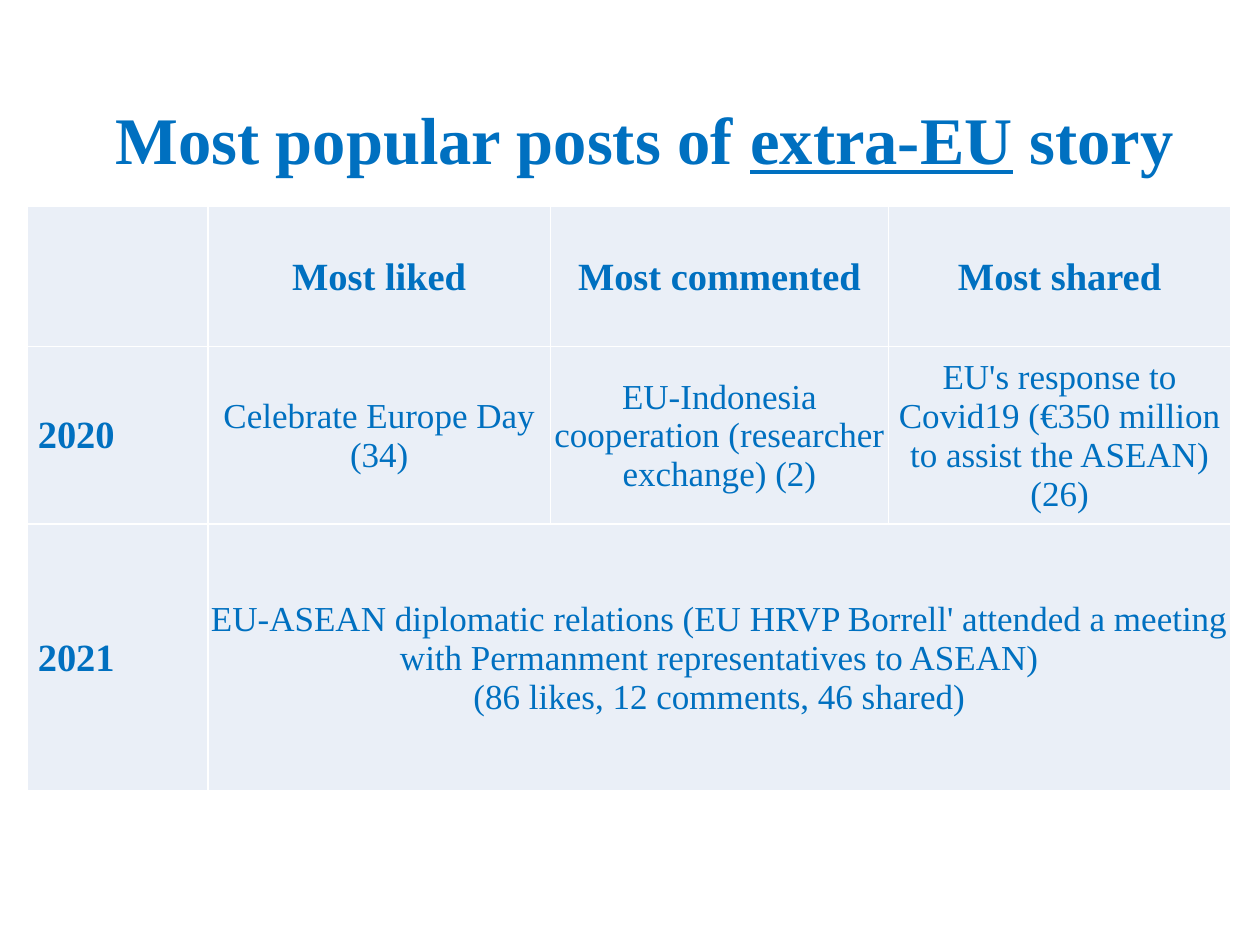
from lxml import etree
from pptx import Presentation, util as u
from pptx.dml.color import RGBColor
from pptx.enum import text
from pptx.oxml import ns

BLUE, PALE, WHITE = "0070C0", "EAEFF7", "FFFFFF"
COLUMN_WIDTHS = [1.43, 2.72, 2.68, 2.72]
ROW_HEIGHTS = [1.11, 1.41, 2.12]
ROWS = [
    ["", "Most liked", "Most commented", "Most shared"],
    ["2020", "Celebrate Europe Day (34)",
     "EU-Indonesia cooperation (researcher exchange) (2)",
     "EU's response to Covid19 (€350 million to assist the ASEAN) (26)"],
    ["2021", "EU-ASEAN diplomatic relations (EU HRVP Borrell' attended a meeting "
     "with Permanment representatives to ASEAN)\n(86 likes, 12 comments, 46 shared)"],
]


def color(value):
    return RGBColor.from_string(value)


def set_values(target, values):
    for name, value in values.items():
        setattr(target, name, value)


class SlideBuilder:
    def __init__(self, slide, font_name="Times New Roman"):
        self.slide = slide
        self.font_name = font_name

    def style_font(self, font, size, bold):
        set_values(font, {"name": self.font_name, "size": u.Pt(size), "bold": bold})
        font.color.rgb = color(BLUE)

    def add_title(self, left, top, width, height, parts):
        """Add a centred title from (text, underlined) parts."""
        box = self.slide.shapes.add_textbox(*map(u.Inches, (left, top, width, height)))
        set_values(box.text_frame, {"word_wrap": True,
                                    "vertical_anchor": text.MSO_ANCHOR.MIDDLE})
        paragraph = box.text_frame.paragraphs[0]
        set_values(paragraph, {"alignment": text.PP_ALIGN.CENTER, "line_spacing": 0.9})
        for words, underlined in parts:
            run = paragraph.add_run()
            run.text = words
            self.style_font(run.font, 38, True)
            run.font.underline = underlined

    def add_borders(self, cell):
        properties = cell._tc.get_or_add_tcPr()
        for side in "LRTB":
            line = etree.SubElement(properties, ns.qn(f"a:ln{side}"), w=str(u.Pt(1)))
            fill = etree.SubElement(line, ns.qn("a:solidFill"))
            etree.SubElement(fill, ns.qn("a:srgbClr"), val=WHITE)

    def fill_cell(self, cell, words, is_header, is_label):
        self.add_borders(cell)
        cell.fill.solid()
        cell.fill.fore_color.rgb = color(PALE)
        set_values(cell, {
            "margin_left": u.Inches(0.08 if is_label else 0.01),
            "margin_right": u.Inches(0.01),
            "margin_top": u.Inches(0.01),
            "margin_bottom": 0,
            "vertical_anchor": text.MSO_ANCHOR.MIDDLE,
        })
        cell.text_frame.text = words
        strong = is_header or is_label
        for paragraph in cell.text_frame.paragraphs:
            paragraph.alignment = text.PP_ALIGN.LEFT if is_label else text.PP_ALIGN.CENTER
            self.style_font(paragraph.font, 22 if strong else 20, strong)

    def add_table(self, left, top, widths, heights, rows):
        """Add a table; a row with missing cells stretches its last one."""
        frame = self.slide.shapes.add_table(
            len(heights), len(widths),
            *map(u.Inches, (left, top, sum(widths), sum(heights))))
        table = frame.table
        for column, width in zip(table.columns, widths):
            column.width = u.Inches(width)
        for row, height in zip(table.rows, heights):
            row.height = u.Inches(height)
        last = len(widths) - 1
        for r, row in enumerate(rows):
            if len(row) <= last:
                table.cell(r, len(row) - 1).merge(table.cell(r, last))
            for c in range(len(widths)):
                words = row[c] if c < len(row) else ""
                self.fill_cell(table.cell(r, c), words, r == 0, c == 0)


def main():
    presentation = Presentation()
    set_values(presentation, {"slide_width": u.Inches(10), "slide_height": u.Inches(7.5)})
    builder = SlideBuilder(presentation.slides.add_slide(presentation.slide_layouts[6]))
    builder.add_title(0.23, 0.62, 9.77, 1.03, [
        ("Most popular posts of ", False), ("extra-EU", True), (" story", False)])
    builder.add_table(0.22, 1.64, COLUMN_WIDTHS, ROW_HEIGHTS, ROWS)
    presentation.save("out.pptx")


if __name__ == "__main__":
    main()
